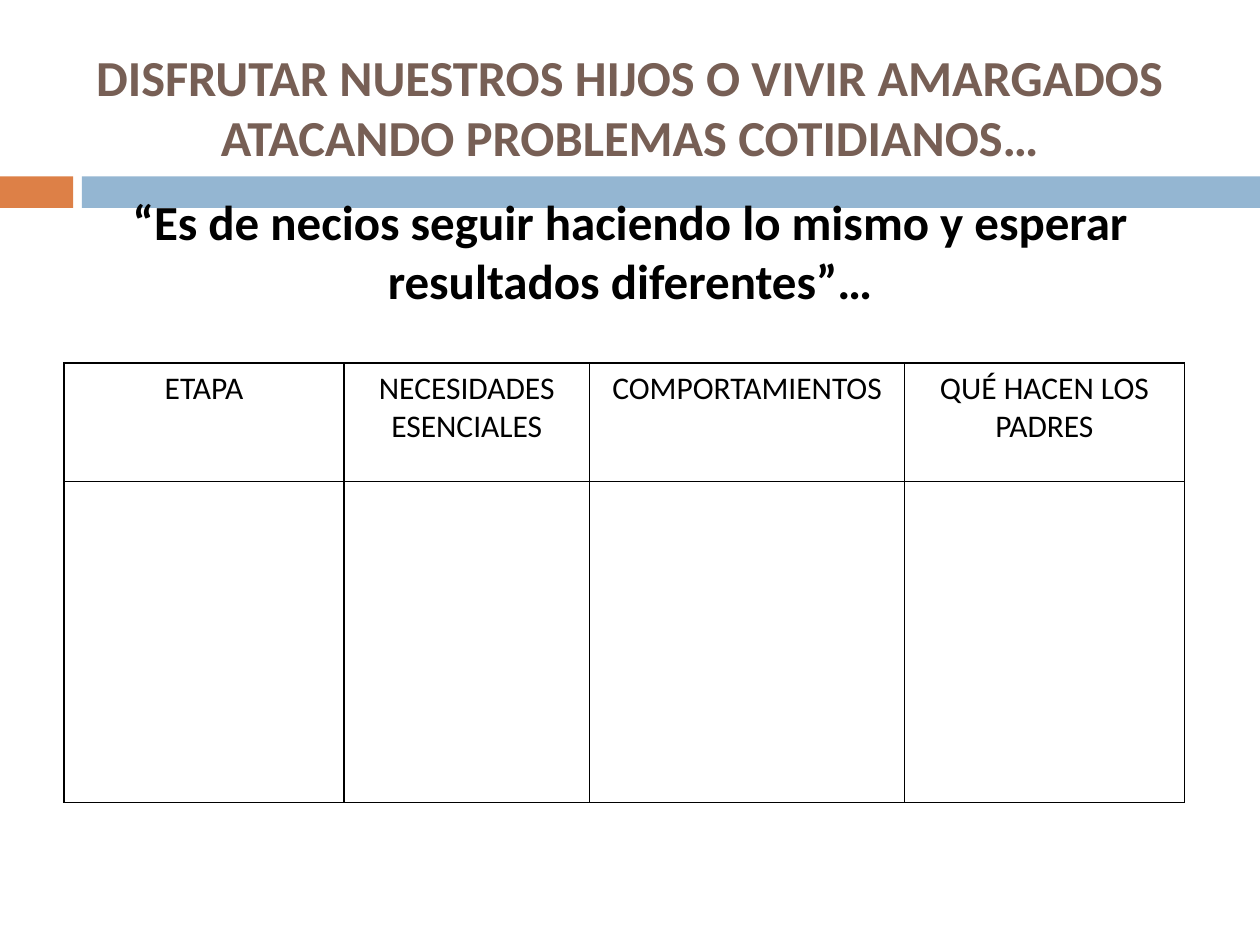
from lxml.etree import SubElement
from pptx import Presentation
from pptx.dml.color import RGBColor
from pptx.enum.shapes import MSO_SHAPE
from pptx.enum.text import MSO_ANCHOR, MSO_AUTO_SIZE, PP_ALIGN
from pptx.oxml.ns import qn
from pptx.util import Inches, Pt

ORANGE = RGBColor(0xDD, 0x80, 0x47)
BLUE = RGBColor(0x94, 0xB6, 0xD2)
BROWN = RGBColor(0x77, 0x5F, 0x55)
BLACK = RGBColor(0, 0, 0)
FONT = "Calibri"

TITLE = "DISFRUTAR NUESTROS HIJOS O VIVIR AMARGADOS ATACANDO PROBLEMAS COTIDIANOS…"
QUOTE = "“Es de necios seguir haciendo lo mismo y esperar resultados diferentes”…"
COLUMNS = [
    ("ETAPA", 2.22),
    ("NECESIDADES ESENCIALES", 1.95),
    ("COMPORTAMIENTOS", 2.5),
    ("QUÉ HACEN LOS PADRES", 2.22),
]
ROW_HEIGHTS = [0.94, 2.55]


def style_paragraph(paragraph, size, color, bold=False):
    paragraph.alignment = PP_ALIGN.CENTER
    paragraph.font.name = FONT
    paragraph.font.size = Pt(size)
    paragraph.font.bold = bold
    paragraph.font.color.rgb = color


def add_band(slide, left, top, width, height):
    accent_width, gap = 0.58, 0.07
    main_left = accent_width + gap
    parts = [
        (left, accent_width, ORANGE),
        (left + main_left, width - main_left, BLUE),
    ]
    for part_left, part_width, color in parts:
        bar = slide.shapes.add_shape(
            MSO_SHAPE.RECTANGLE,
            Inches(part_left), Inches(top), Inches(part_width), Inches(height),
        )
        bar.shadow.inherit = False
        bar.fill.solid()
        bar.fill.fore_color.rgb = color
        bar.line.fill.background()
        slide.shapes._spTree.insert_element_before(bar._element, "p:sp")


def fill_placeholder(placeholder, text, size, color, anchor, left, top, width, height):
    placeholder.left, placeholder.top = Inches(left), Inches(top)
    placeholder.width, placeholder.height = Inches(width), Inches(height)
    frame = placeholder.text_frame
    frame.text = text
    frame.word_wrap = True
    frame.auto_size = MSO_AUTO_SIZE.NONE
    frame.vertical_anchor = anchor
    style_paragraph(frame.paragraphs[0], size, color, bold=True)
    return frame.paragraphs[0]


def add_quote(placeholder, left, top, width, height):
    quote = fill_placeholder(
        placeholder, QUOTE, 28, BLACK, MSO_ANCHOR.TOP, left, top, width, height
    )
    quote.space_before = Pt(7)
    properties = quote._p.get_or_add_pPr()
    properties.set("marL", "0")
    properties.set("indent", "0")
    bullet = SubElement(properties, qn("a:buNone"))
    properties.remove(bullet)
    properties.insert_element_before(bullet, "a:tabLst", "a:defRPr", "a:extLst")


def set_borders(cell):
    properties = cell._tc.get_or_add_tcPr()
    for index, side in enumerate(("a:lnL", "a:lnR", "a:lnT", "a:lnB")):
        border = SubElement(properties, qn(side), w=str(Pt(1)))
        fill = SubElement(border, qn("a:solidFill"))
        SubElement(fill, qn("a:srgbClr"), val=str(BLACK))
        properties.insert(index, border)


def add_stages_table(slide, left, top):
    width = sum(column_width for _, column_width in COLUMNS)
    table = slide.shapes.add_table(
        len(ROW_HEIGHTS), len(COLUMNS),
        Inches(left), Inches(top), Inches(width), Inches(sum(ROW_HEIGHTS)),
    ).table
    table.first_row = False
    table.horz_banding = False
    for row, height in zip(table.rows, ROW_HEIGHTS):
        row.height = Inches(height)
    for index, (heading, column_width) in enumerate(COLUMNS):
        table.columns[index].width = Inches(column_width)
        table.cell(0, index).text = heading
    for cell in table.iter_cells():
        cell.fill.background()
        set_borders(cell)
        style_paragraph(cell.text_frame.paragraphs[0], 18, BLACK)


def main():
    presentation = Presentation()
    presentation.slide_width = Inches(10)
    presentation.slide_height = Inches(7.5)
    slide = presentation.slides.add_slide(presentation.slide_layouts[1])
    add_band(slide, 0, 1.4, 10, 0.25)
    fill_placeholder(
        slide.shapes.title, TITLE, 28.8, BROWN, MSO_ANCHOR.MIDDLE, 0.5, 0.3, 9, 1.09
    )
    add_quote(slide.placeholders[1], 0.5, 1.47, 9, 5.23)
    add_stages_table(slide, 0.51, 2.88)
    presentation.save("out.pptx")


if __name__ == "__main__":
    main()
